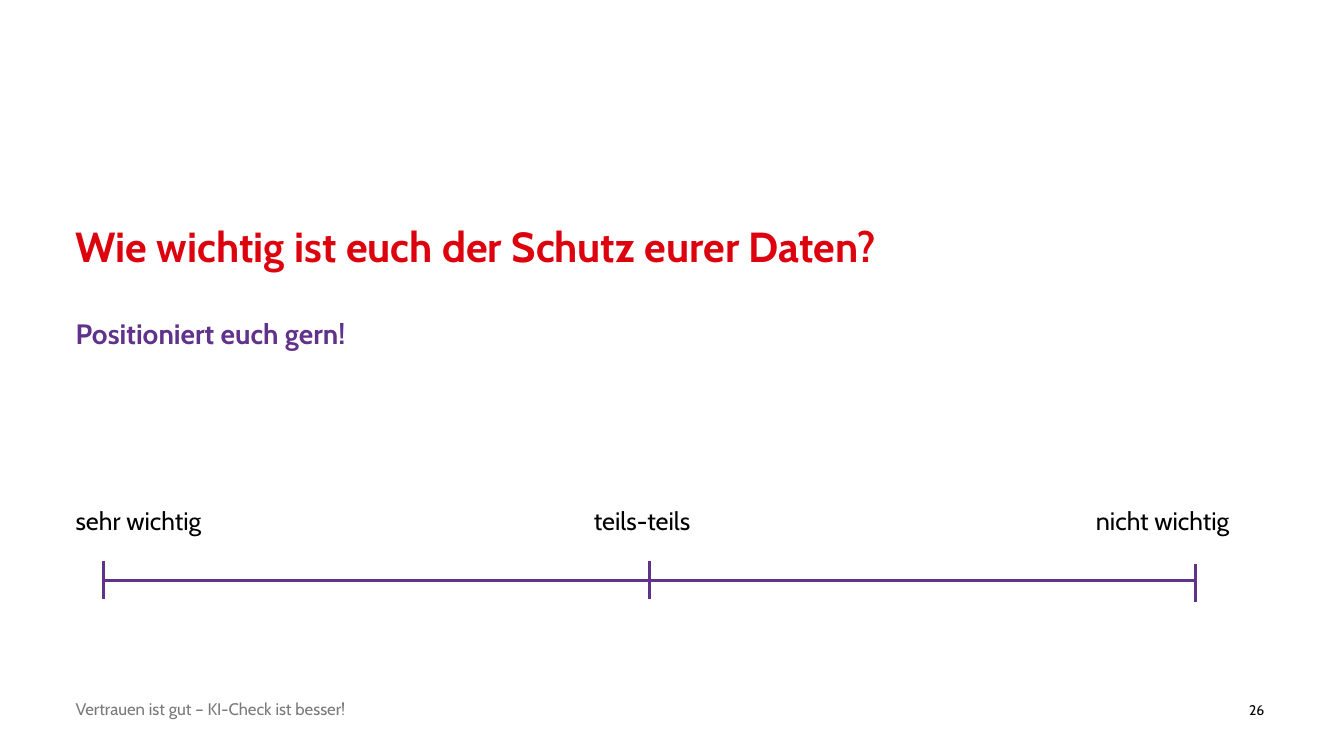
"""Build a slide asking the audience to place themselves on a data protection scale."""
from dataclasses import dataclass

from lxml.etree import SubElement
from pptx import Presentation
from pptx.dml.color import RGBColor as RGB
from pptx.enum.shapes import MSO_CONNECTOR as Connector
from pptx.enum.text import MSO_ANCHOR as Anchor, MSO_AUTO_SIZE as AutoSize, PP_ALIGN as Align
from pptx.oxml.ns import qn
from pptx.util import Emu, Pt


@dataclass(frozen=True)
class Theme:
    font: str = "Cabin"
    red: str = "DC020E"
    purple: str = "61328A"
    black: str = "000000"
    grey: str = "797979"
    title: int = 30
    lead: int = 20
    label: int = 18
    footer: int = 12
    number: int = 10
    line: float = 2.25


class Slide:
    """Hold the theme and the current slide."""

    SCALE = 9144

    def __init__(self, prs, theme):
        self.theme = theme
        self.s = prs.slides.add_slide(prs.slide_layouts[1])

    def px(self, *lengths):
        return [Emu(n * self.SCALE) for n in lengths]

    def set_text(self, sp, text, size, color, bold=False, align=Align.LEFT,
                 anchor=Anchor.TOP, spacing=1.0, after=0):
        tf = sp.text_frame
        tf.word_wrap = True
        tf.auto_size = AutoSize.NONE
        tf.vertical_anchor = anchor
        tf.margin_left = tf.margin_top = tf.margin_right = tf.margin_bottom = 0
        p = tf.paragraphs[0]
        p.alignment = align
        p.line_spacing = spacing
        p.space_before, p.space_after = Pt(0), Pt(after)
        r = p.add_run()
        r.text = text
        r.font.name, r.font.size, r.font.bold = self.theme.font, Pt(size), bold
        r.font.color.rgb = RGB.from_string(color)

    def placeholder(self, idx, box, text, size, color, **style):
        sp = self.s.placeholders[idx]
        sp.left, sp.top, sp.width, sp.height = self.px(*box)
        pPr = sp.text_frame.paragraphs[0]._p.get_or_add_pPr()
        pPr.set("marL", "0")
        pPr.set("indent", "0")
        SubElement(pPr, qn("a:buNone"))
        self.set_text(sp, text, size, color, bold=True, **style)

    def text(self, box, text, size, color, **style):
        sp = self.s.shapes.add_textbox(*self.px(*box))
        self.set_text(sp, text, size, color, **style)

    def scale(self, left, right, y, ticks):
        group = self.s.shapes.add_group_shape()
        lines = [(left, y, right, y)] + [(x, top, x, top + 37) for x, top in ticks]
        for ends in lines:
            line = group.shapes.add_connector(Connector.STRAIGHT, *self.px(*ends))
            line.line.color.rgb = RGB.from_string(self.theme.purple)
            line.line.width = Pt(self.theme.line)
            SubElement(line._element.spPr, qn("a:effectLst"))


def main():
    prs = Presentation()
    prs.slide_width, prs.slide_height = Emu(1333 * Slide.SCALE), Emu(750 * Slide.SCALE)
    t = Theme()
    s = Slide(prs, t)
    s.placeholder(0, (75, 224, 1181, 43), "Wie wichtig ist euch der Schutz eurer Daten?",
                  t.title, t.red, spacing=0.9)
    s.placeholder(1, (75, 314, 667, 60), "Positioniert euch gern!",
                  t.lead, t.purple, after=15)
    s.scale(103, 1184, 576, [(103, 557), (644, 557), (1186, 560)])
    for left, width, label in [(75, 136, "sehr wichtig"), (589, 136, "teils-teils"),
                               (1087, 167, "nicht wichtig")]:
        s.text((left, 501, width, 30), label, t.label, t.black)
    s.text((1184, 696, 70, 16), "26", t.number, t.black,
           align=Align.RIGHT, anchor=Anchor.MIDDLE)
    s.text((75, 696, 984, 16), "Vertrauen ist gut – KI-Check ist besser!", t.footer, t.grey,
           anchor=Anchor.MIDDLE, spacing=0.9, after=6)
    prs.save("out.pptx")


if __name__ == "__main__":
    main()
